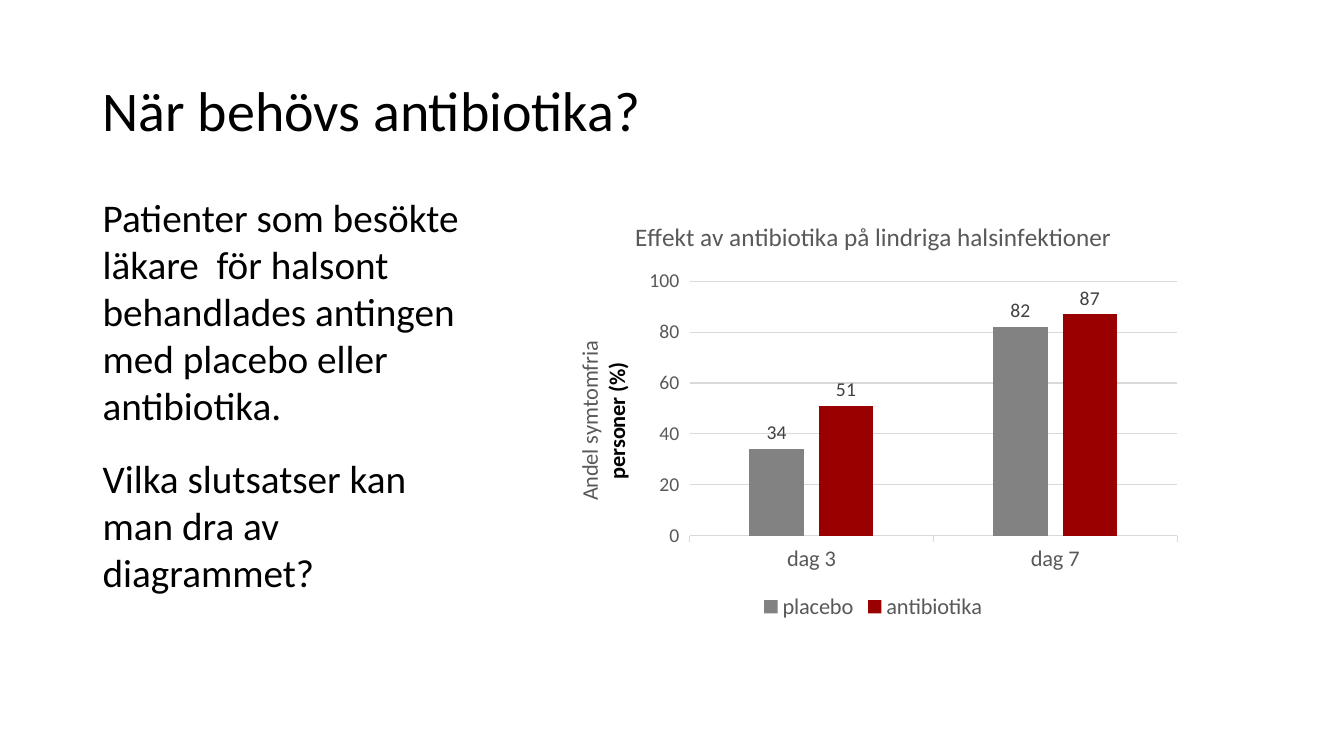
from lxml import etree
from pptx import Presentation
from pptx.chart.data import CategoryChartData
from pptx.dml.color import RGBColor
from pptx.enum.chart import XL_CHART_TYPE as ChartType
from pptx.enum.chart import XL_LABEL_POSITION as LabelPosition
from pptx.enum.chart import XL_LEGEND_POSITION as LegendPosition
from pptx.enum.chart import XL_TICK_MARK as TickMark
from pptx.enum.text import MSO_ANCHOR as Anchor
from pptx.enum.text import MSO_AUTO_SIZE as AutoSize
from pptx.enum.text import PP_ALIGN as Align
from pptx.oxml import parse_xml
from pptx.oxml.ns import nsdecls
from pptx.util import Inches, Pt

BLACK = RGBColor(0x00, 0x00, 0x00)
AXIS_TEXT = RGBColor(0x59, 0x59, 0x59)
LABEL_TEXT = RGBColor(0x40, 0x40, 0x40)
GRID = RGBColor(0xD9, 0xD9, 0xD9)
GREY = RGBColor(0x82, 0x82, 0x82)
RED = RGBColor(0x99, 0x00, 0x00)
FONT = "Calibri"

DAYS = ["dag 3", "dag 7"]
SERIES = [("placebo", [34, 82], GREY), ("antibiotika", [51, 87], RED)]
QUESTIONS = [
    "Patienter som besökte läkare  för halsont\v"
    "behandlades antingen med placebo eller antibiotika.",
    "Vilka slutsatser kan man dra av diagrammet?",
]


def style_font(font, size, color, bold=False):
    font.name = FONT
    font.size = Pt(size)
    font.bold = bold
    font.color.rgb = color


def style_line(line, color):
    line.color.rgb = color
    line.width = Pt(0.75)


def set_title(page, text):
    title = page.shapes.title
    title.left, title.top = Inches(0.92), Inches(0.4)
    title.width, title.height = Inches(11.5), Inches(1.45)
    frame = title.text_frame
    frame.text = text
    frame.auto_size = AutoSize.NONE
    frame.vertical_anchor = Anchor.MIDDLE
    para = frame.paragraphs[0]
    para.alignment = Align.LEFT
    para.line_spacing = 0.9
    style_font(para.runs[0].font, 40, BLACK)


def add_body(page, texts):
    box = page.shapes.add_textbox(Inches(0.92), Inches(1.87), Inches(3.83), Inches(4.12))
    frame = box.text_frame
    frame.word_wrap = True
    frame.auto_size = AutoSize.SHAPE_TO_FIT_TEXT
    for index, text in enumerate(texts):
        para = frame.add_paragraph() if index else frame.paragraphs[0]
        para.text = text
        if index:
            para.space_before = Pt(18)
        for span in para.runs:
            style_font(span.font, 28, BLACK)


def set_plot_area(chart, x, y, width, height):
    """Fix the inner plot area, in fractions of the chart frame."""
    layout = parse_xml(f"<c:layout {nsdecls('c')}><c:manualLayout/></c:layout>")
    values = {"layoutTarget": "inner", "xMode": "edge", "yMode": "edge",
              "x": x, "y": y, "w": width, "h": height}
    for name, value in values.items():
        etree.SubElement(layout[0], f"{{{layout.nsmap['c']}}}{name}").set("val", str(value))
    plot_area = chart.plots[0]._element.getparent()
    for old in plot_area.findall("c:layout", layout.nsmap):
        plot_area.remove(old)
    plot_area.insert(0, layout)


def style_axes(chart):
    days = chart.category_axis
    days.major_tick_mark = TickMark.OUTSIDE
    style_line(days.format.line, GRID)
    style_font(days.tick_labels.font, 16, AXIS_TEXT)

    share = chart.value_axis
    share.minimum_scale, share.maximum_scale, share.major_unit = 0, 100, 20
    share.major_tick_mark = TickMark.OUTSIDE
    share.format.line.fill.background()
    style_line(share.major_gridlines.format.line, GRID)
    style_font(share.tick_labels.font, 14, AXIS_TEXT)

    frame = share.axis_title.text_frame
    frame.text = "Andel symtomfria\npersoner (%)"
    first, second = frame.paragraphs
    style_font(first.runs[0].font, 16, AXIS_TEXT)
    style_font(second.runs[0].font, 16, BLACK, bold=True)


def add_effect_chart(page):
    data = CategoryChartData()
    data.categories = DAYS
    for name, values, _ in SERIES:
        data.add_series(name, values)
    chart = page.shapes.add_chart(ChartType.COLUMN_CLUSTERED, Inches(5.52), Inches(1.99),
                                  Inches(6.28), Inches(4.21), data).chart
    style_font(chart.font, 10, BLACK)

    title = chart.chart_title.text_frame
    title.text = "Effekt av antibiotika på lindriga halsinfektioner"
    style_font(title.paragraphs[0].runs[0].font, 18, AXIS_TEXT)

    chart.has_legend = True
    chart.legend.position = LegendPosition.BOTTOM
    chart.legend.include_in_layout = False
    style_font(chart.legend.font, 16, AXIS_TEXT)

    plot = chart.plots[0]
    plot.gap_width, plot.overlap = 219, -27
    plot.vary_by_categories = False
    for series, (_, _, color) in zip(plot.series, SERIES):
        series.format.fill.solid()
        series.format.fill.fore_color.rgb = color
        labels = series.data_labels
        labels.show_value = True
        labels.position = LabelPosition.OUTSIDE_END
        style_font(labels.font, 14, LABEL_TEXT)

    style_axes(chart)
    set_plot_area(chart, 0.21, 0.19, 0.77, 0.6)


def main():
    deck = Presentation()
    deck.slide_width, deck.slide_height = Inches(13.33), Inches(7.5)
    page = deck.slides.add_slide(deck.slide_layouts.get_by_name("Title Only"))
    set_title(page, "När behövs antibiotika?")
    add_body(page, QUESTIONS)
    add_effect_chart(page)
    deck.save("out.pptx")


if __name__ == "__main__":
    main()
